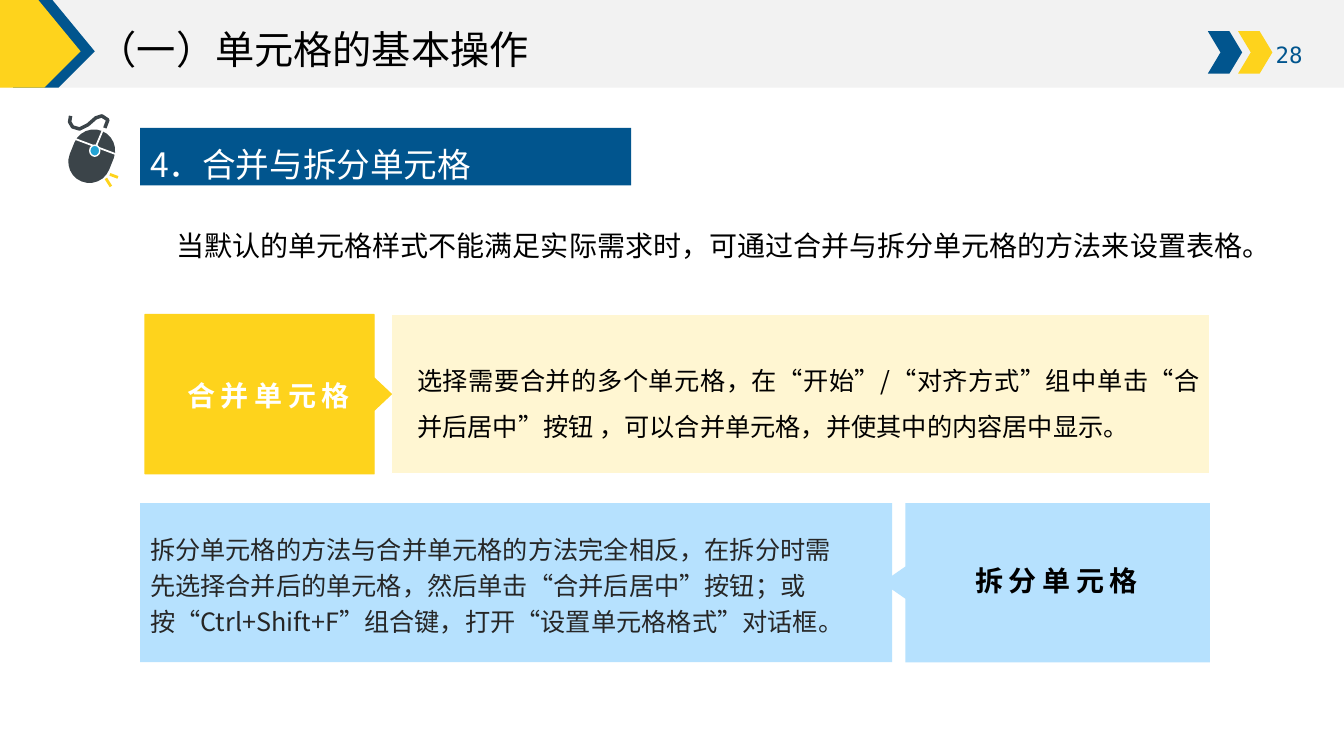
import collections

import lxml.etree
import pptx
import pptx.dml.color
import pptx.enum.shapes
import pptx.enum.text
import pptx.oxml.ns
import pptx.util

Inches = pptx.util.Inches
RGBColor = pptx.dml.color.RGBColor
Align = pptx.enum.text.PP_ALIGN
Preset = pptx.enum.shapes.MSO_SHAPE
Box = collections.namedtuple("Box", "left top width height")

BLUE = RGBColor(0x01, 0x55, 0x8E)
YELLOW = RGBColor(0xFE, 0xD3, 0x1C)
CREAM = RGBColor(0xFF, 0xF6, 0xD2)
SKY = RGBColor(0xB6, 0xE1, 0xFE)
GREY = RGBColor(0xF2, 0xF2, 0xF2)
WHITE = RGBColor(0xFF, 0xFF, 0xFF)
BLACK = RGBColor(0, 0, 0)
INK = RGBColor(0x26, 0x26, 0x26)
SLATE = RGBColor(0x3B, 0x44, 0x49)
CYAN = RGBColor(0x23, 0xA3, 0xD4)
CJK_FONT = "Noto Sans CJK SC"


def lengths(box):
    return [Inches(value) for value in box]


def inner(box, left, top, width, height):
    """Return a box whose corner is measured from the corner of another."""
    return Box(box.left + left, box.top + top, width, height)


def paint(shape, color, outline=None):
    shape.shadow.inherit = False
    shape.fill.solid()
    shape.fill.fore_color.rgb = color
    if outline is None:
        shape.line.fill.background()
    else:
        shape.line.color.rgb = outline
        shape.line.width = pptx.util.Pt(1)


def add_block(slide, box, color, preset=Preset.RECTANGLE, outline=None):
    shape = slide.shapes.add_shape(preset, *lengths(box))
    paint(shape, color, outline)
    return shape


def add_outline(slide, points, color, outline=None, close=True):
    corners = [(Inches(x), Inches(y)) for x, y in points]
    builder = slide.shapes.build_freeform(*corners[0])
    builder.add_line_segments(corners[1:], close=close)
    shape = builder.convert_to_shape()
    paint(shape, color, outline)
    return shape


def add_stroke(slide, start, end, color, weight):
    stroke = slide.shapes.add_connector(pptx.enum.shapes.MSO_CONNECTOR.STRAIGHT,
                                        *lengths(start + end))
    stroke.line.color.rgb = color
    stroke.line.width = pptx.util.Pt(weight)
    lxml.etree.SubElement(stroke.element.spPr, pptx.oxml.ns.qn("a:effectLst"))


def write(frame, text, size, color, align=Align.LEFT, spacing=1.0, font=CJK_FONT,
          bold=False, tracking=0):
    para = frame.paragraphs[0]
    para.alignment = align
    para.line_spacing = spacing
    span = para.add_run()
    span.text = text
    span.font.size = pptx.util.Pt(size)
    span.font.name = font
    span.font.bold = bold
    span.font.color.rgb = color
    properties = span.font._element
    if tracking:
        properties.set("spc", str(tracking * 100))
    east_asian = lxml.etree.SubElement(properties, pptx.oxml.ns.qn("a:ea"))
    east_asian.set("typeface", font)
    return para


def add_text(slide, box, text, size, color, margins=True, **style):
    frame = slide.shapes.add_textbox(*lengths(box)).text_frame
    frame.word_wrap = True
    if not margins:
        frame.margin_left = frame.margin_right = 0
        frame.margin_top = frame.margin_bottom = 0
    return write(frame, text, size, color, **style)


def header(slide, box):
    add_block(slide, box, GREY)
    chevrons = inner(box, 11.98, 0.31, 0.34, 0.42)
    for index, color in enumerate((BLUE, YELLOW)):
        chevron = add_block(slide, inner(chevrons, 0.3 * index, 0, 0.34, 0.42), color,
                            Preset.CHEVRON)
        chevron.adjustments[0] = 0.37
    add_text(slide, inner(box, 12.43, 0.36, 0.71, 0.37), "28", 16, BLUE,
             align=Align.CENTER, font="DejaVu Sans Mono")
    bottom = box.top + box.height
    for reach, color in ((0.94, BLUE), (0.8, YELLOW)):
        tip = box.left + reach
        left = max(box.left, tip - 0.81)
        add_outline(slide, [(left, box.top), (tip - 0.42, box.top), (tip, box.top + 0.51),
                            (tip - 0.36, bottom), (left, bottom)], color)
    title = slide.shapes.title
    slide.shapes.element.append(title.element)
    title.left, title.top, title.width, title.height = lengths(
        inner(box, 0.87, 0.23, 11.8, 0.57))
    title.text_frame.vertical_anchor = pptx.enum.text.MSO_ANCHOR.MIDDLE
    write(title.text_frame, "（一）单元格的基本操作", 28, BLACK, spacing=0.9)


def mouse_icon(slide, left, top):
    def at(x, y):
        return left + x, top + y

    body = add_block(slide, Box(*at(0.03, 0.15), 0.42, 0.54), SLATE, Preset.ROUNDED_RECTANGLE)
    body.adjustments[0] = 0.5
    body.rotation = 22
    add_stroke(slide, at(0.08, 0.25), at(0.48, 0.4), WHITE, 1.25)
    add_stroke(slide, at(0.27, 0.35), at(0.35, 0.16), WHITE, 1.25)
    add_block(slide, Box(*at(0.22, 0.31), 0.1, 0.11), CYAN, Preset.OVAL, WHITE)
    cable = add_outline(slide, [at(0.03, 0.02), at(0.02, 0.08), at(0.05, 0.13),
                                at(0.12, 0.15), at(0.2, 0.11), at(0.28, 0.04),
                                at(0.34, 0.02), at(0.4, 0.06), at(0.37, 0.14)],
                        SLATE, SLATE, close=False)
    cable.fill.background()
    cable.line.width = pptx.util.Pt(2.5)
    add_stroke(slide, at(0.42, 0.6), at(0.5, 0.63), YELLOW, 2)
    add_stroke(slide, at(0.38, 0.64), at(0.43, 0.72), YELLOW, 2)


def section_heading(slide, box):
    add_block(slide, box, BLUE)
    add_text(slide, inner(box, 0, 0.03, 4.45, 0.58), "4．合并与拆分单元格", 24, WHITE,
             spacing=1.2)


def introduction(slide, box):
    para = add_text(slide, box, "当默认的单元格样式不能满足实际需求时，可通过合并与拆分单元格的方法来设置表格。",
                    20, BLACK, align=Align.JUSTIFY, spacing=1.5)
    para._p.get_or_add_pPr().set("indent", str(Inches(0.67)))


def pointer_label(slide, box, depth, color, outline=None):
    """Draw a box with a tip on its right side, or its left if depth is negative."""
    right = box.left + box.width
    near, far = (right, box.left) if depth > 0 else (box.left, right)
    bottom = box.top + box.height
    middle = box.top + box.height / 2
    add_outline(slide, [(far, box.top), (near, box.top), (near, middle - 0.16),
                        (near + depth, middle), (near, middle + 0.16),
                        (near, bottom), (far, bottom)], color, outline)


def merge_callout(slide, box):
    add_block(slide, inner(box, 2.44, 0, 8.12, box.height), CREAM, outline=WHITE)
    pointer_label(slide, inner(box, 0, 0, 2.27, box.height), 0.17, YELLOW, YELLOW)
    add_text(slide, inner(box, 2.6, 0.31, 7.96, 0.96),
             "选择需要合并的多个单元格，在“开始”/“对齐方式”组中单击“合并后居中”按钮 ，"
             "可以合并单元格，并使其中的内容居中显示。",
             18, BLACK, align=Align.JUSTIFY, spacing=1.5)
    add_text(slide, inner(box, 0.38, 0.64, 1.69, 0.34), "合并单元格", 20, WHITE,
             margins=False, align=Align.CENTER, bold=True, tracking=4)


def split_callout(slide, box):
    add_block(slide, inner(box, 0, 0, 7.46, box.height), SKY)
    pointer_label(slide, inner(box, 7.59, 0, 3.02, box.height), -0.23, SKY)
    add_text(slide, inner(box, 0, 0.2, 7.08, 1.19),
             "拆分单元格的方法与合并单元格的方法完全相反，在拆分时需先选择合并后的单元格，"
             "然后单击“合并后居中”按钮；或按“Ctrl+Shift+F”组合键，打开“设置单元格格式”对话框。",
             18, INK, spacing=1.2)
    add_text(slide, inner(box, 7.72, 0.6, 2.74, 0.34), "拆分单元格", 20, BLACK,
             margins=False, align=Align.CENTER, bold=True, tracking=4)


def main():
    deck = pptx.Presentation()
    deck.slide_width, deck.slide_height = Inches(13.33), Inches(7.5)
    page = deck.slides.add_slide(deck.slide_layouts[5])
    header(page, Box(0, 0, 13.33, 0.87))
    section_heading(page, Box(1.39, 1.27, 4.87, 0.57))
    mouse_icon(page, 0.67, 1.13)
    introduction(page, Box(0.98, 2.05, 11.78, 0.61))
    merge_callout(page, Box(1.44, 3.12, 10.56, 1.58))
    split_callout(page, Box(1.39, 4.99, 10.61, 1.58))
    deck.save("out.pptx")


if __name__ == "__main__":
    main()
